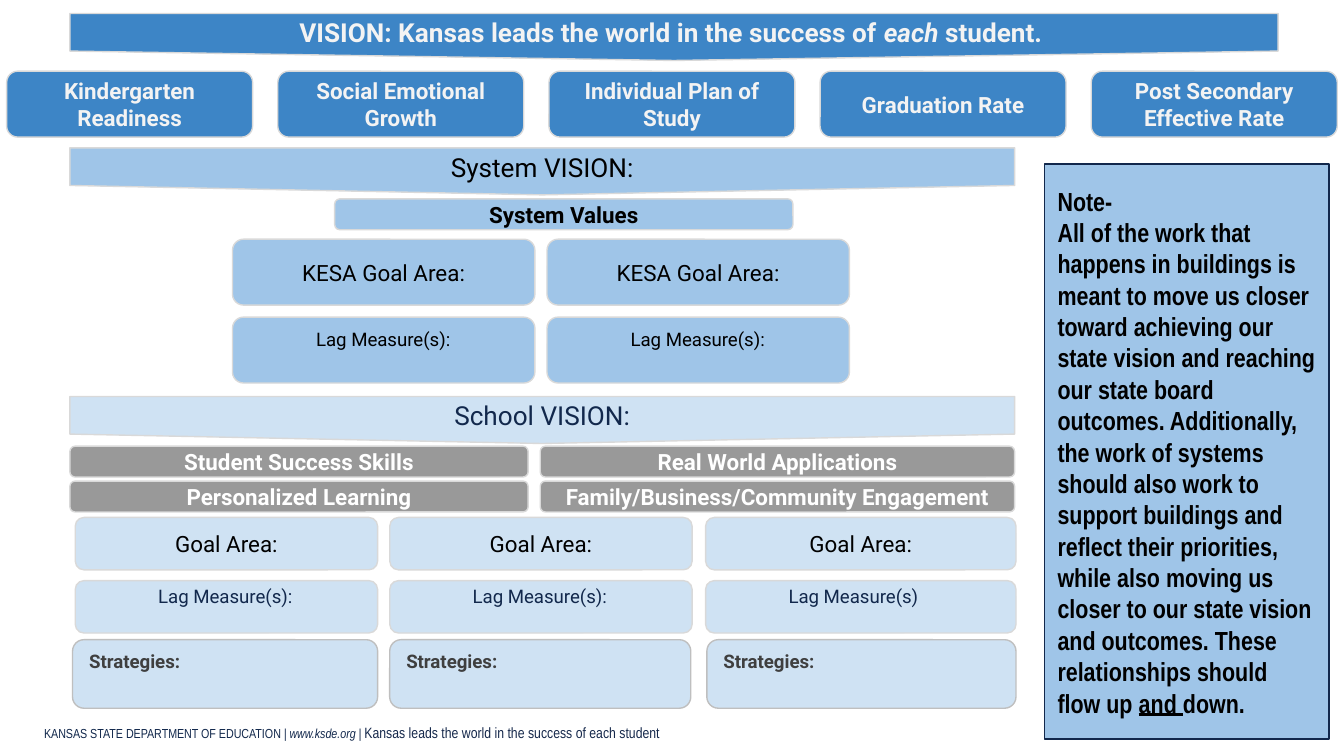
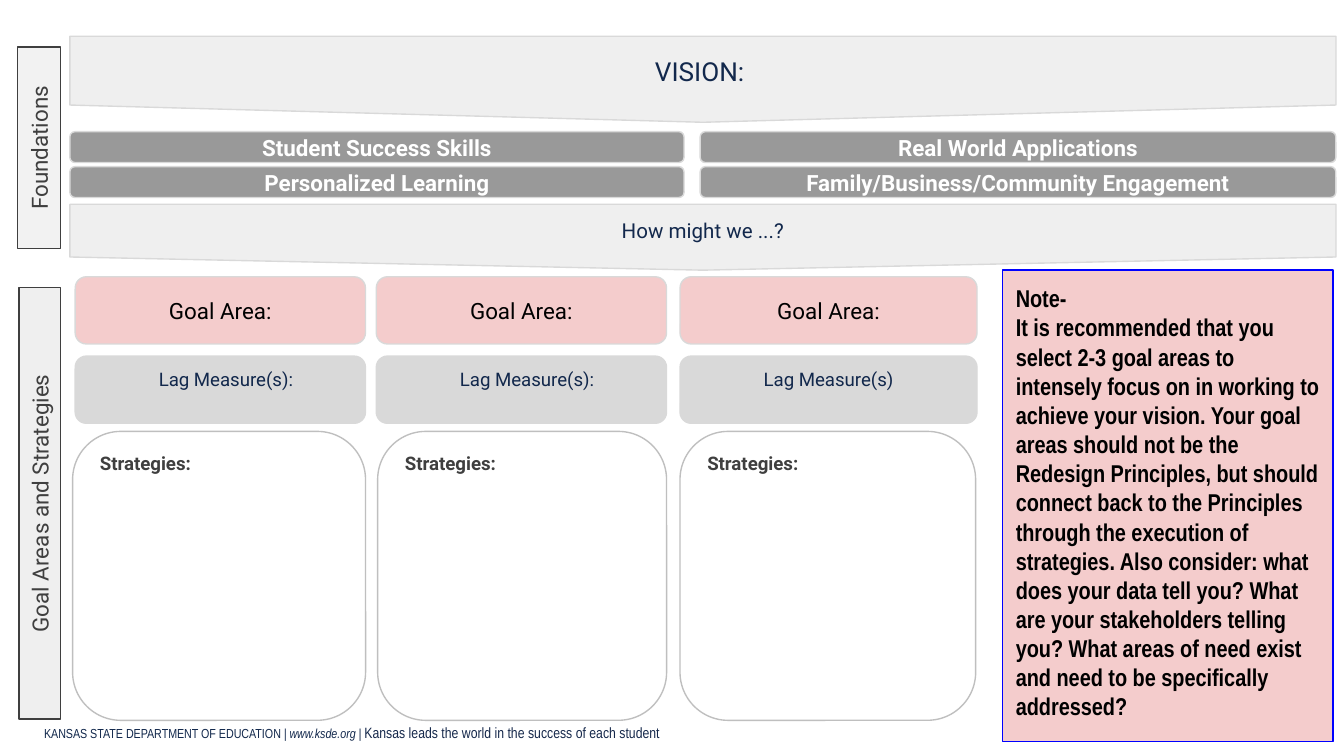
import dataclasses
import pptx
import pptx.dml.color
import pptx.enum.shapes
import pptx.enum.text
import pptx.util

Inches = pptx.util.Inches
Pt = pptx.util.Pt
RGBColor = pptx.dml.color.RGBColor
Preset = pptx.enum.shapes.MSO_SHAPE
Align = pptx.enum.text.PP_ALIGN
Anchor = pptx.enum.text.MSO_ANCHOR

NAVY = RGBColor(0x12, 0x28, 0x4C)
FOOTER_NAVY = RGBColor(0x15, 0x28, 0x4B)
BLACK = RGBColor(0, 0, 0)
WHITE = RGBColor(0xFF, 0xFF, 0xFF)
OFF_WHITE = RGBColor(0xF3, 0xF3, 0xF3)
CHARCOAL = RGBColor(0x3F, 0x3F, 0x3F)
STATE_BLUE = RGBColor(0x3D, 0x85, 0xC6)
SYSTEM_BLUE = RGBColor(0x9F, 0xC5, 0xE8)
SCHOOL_BLUE = RGBColor(0xCF, 0xE2, 0xF3)
GREY = RGBColor(0x99, 0x99, 0x99)
SILVER = RGBColor(0xBF, 0xBF, 0xBF)
LIGHT_GREY = RGBColor(0xD9, 0xD9, 0xD9)
PALE_GREY = RGBColor(0xEF, 0xEF, 0xEF)
TAB_GREY = RGBColor(0xF2, 0xF2, 0xF2)
PINK = RGBColor(0xF4, 0xCC, 0xCC)
NOTE_BLUE = RGBColor(0, 0, 0xFF)

ROBOTO = "Roboto"
NARROW = "Arial Narrow"


@dataclasses.dataclass(frozen=True)
class Style:
    size: float = 12
    color: RGBColor = BLACK
    bold: bool = False
    font: str = ROBOTO
    preset: int = Preset.ROUNDED_RECTANGLE
    line: RGBColor = LIGHT_GREY
    align: int = Align.CENTER
    anchor: int = Anchor.MIDDLE
    indent: float = 0
    top_inset: float = 0.05
    bottom_inset: float = 0.05


GOAL = Style()
VALUES = Style(bold=True)
OUTCOME = Style(color=OFF_WHITE, bold=True)
PRINCIPLE = Style(color=WHITE, bold=True)
LAG = Style(10, NAVY, align=Align.LEFT, indent=0.5, top_inset=0, bottom_inset=0.16)
SYSTEM_LAG = dataclasses.replace(LAG, color=BLACK)
STRATEGY = Style(10, CHARCOAL, True, line=SILVER, align=Align.LEFT, anchor=Anchor.TOP)
BANNER = Style(14, NAVY, preset=Preset.FLOWCHART_OFFPAGE_CONNECTOR,
               top_inset=0.1, bottom_inset=0.1)
SYSTEM_BANNER = dataclasses.replace(BANNER, color=BLACK)
STATE_BANNER = dataclasses.replace(BANNER, color=OFF_WHITE, bold=True)
QUESTION_BANNER = dataclasses.replace(BANNER, size=11)
SIDE_TAB = Style(color=CHARCOAL, preset=Preset.RECTANGLE, line=CHARCOAL)
BLUE_NOTE = Style(14, BLACK, True, NARROW, Preset.RECTANGLE, NAVY, Align.LEFT,
                  top_inset=0.1, bottom_inset=0.1)
PINK_NOTE = dataclasses.replace(BLUE_NOTE, size=13, line=NOTE_BLUE, anchor=Anchor.TOP)

FOOTER = [
    ("KANSAS STATE DEPARTMENT OF EDUCATION ", 7, NAVY, False),
    ("| www.ksde.org | ", 7, NAVY, True),
    ("Kansas leads the world in the success of each student", 8, FOOTER_NAVY, False),
]
STATE_VISION = [[("VISION: Kansas leads the world in the success of ", {}),
                 ("each ", {"italic": True}), ("student. ", {})]]
OUTCOMES = ["Kindergarten Readiness", "Social Emotional Growth", "Individual Plan of Study",
            "Graduation Rate", "Post Secondary Effective Rate"]
PRINCIPLES = [
    ["Student Success Skills", "Real World Applications"],
    ["Personalized Learning", "Family/Business/Community Engagement"],
]
GOAL_LABELS = ["Goal Area:"] * 3
LAG_LABELS = ["Lag Measure(s):", "Lag Measure(s):", "Lag Measure(s)"]
STRATEGY_LABELS = ["Strategies:"] * 3
ALIGNMENT_NOTE = [
    [("Note-", {})],
    [("All of the work that happens in buildings is meant to move us closer toward achieving "
      "our state vision and reaching our state board outcomes. Additionally, the work of "
      "systems should also work to support buildings and reflect their priorities, while also "
      "moving us closer to our state vision and outcomes. These relationships should flow up ",
      {}), ("and ", {"underline": True}), ("down.", {})],
]
GOALS_NOTE = [
    [("Note-", {})],
    [("It is recommended that you select 2-3 goal areas to intensely focus on in working to "
      "achieve your vision. Your goal areas should not be the Redesign Principles, but should "
      "connect back to the Principles through the execution of strategies. Also consider: what "
      "does your data tell you? What are your stakeholders telling you? What areas of need "
      "exist and need to be specifically addressed?", {})],
]


def set_insets(frame, top, bottom):
    frame.word_wrap = True
    frame.margin_left = frame.margin_right = Inches(0.1)
    frame.margin_top, frame.margin_bottom = Inches(top), Inches(bottom)


def format_run(run, font, size, color, bold=False, italic=False, underline=False):
    run.font.name = font
    run.font.size = Pt(size)
    run.font.color.rgb = color
    run.font.bold = bold
    run.font.italic = italic
    run.font.underline = underline


def add_box(slide, at, content, fill, style, rotation=0):
    shape = slide.shapes.add_shape(style.preset, *map(Inches, at))
    shape.shadow.inherit = False
    shape.rotation = rotation
    shape.fill.solid()
    shape.fill.fore_color.rgb = fill
    shape.line.color.rgb = style.line
    shape.line.width = Pt(0.75)
    frame = shape.text_frame
    set_insets(frame, style.top_inset, style.bottom_inset)
    frame.vertical_anchor = style.anchor
    paragraphs = [[(content, {})]] if isinstance(content, str) else content
    frame.text = "\n".join(parts[0][0] for parts in paragraphs)
    for paragraph, parts in zip(frame.paragraphs, paragraphs):
        paragraph.alignment = style.align
        if style.indent:
            paragraph._p.get_or_add_pPr().set("indent", str(Inches(style.indent)))
        for text, emphasis in parts[1:]:
            paragraph.add_run().text = text
        for run, (text, emphasis) in zip(paragraph.runs, parts):
            format_run(run, style.font, style.size, style.color, style.bold, **emphasis)


def add_row(slide, labels, columns, top, height, fill, style):
    for label, (left, width) in zip(labels, columns):
        add_box(slide, (left, top, width, height), label, fill, style)


def add_principles(slide, columns, top):
    for index, labels in enumerate(PRINCIPLES):
        add_row(slide, labels, columns, top + 0.26 * index, 0.23, GREY, PRINCIPLE)


def add_footer(slide):
    frame = slide.shapes.add_textbox(*map(Inches, (0.23, 5.33, 6.6, 0.24))).text_frame
    set_insets(frame, 0.05, 0.05)
    frame.vertical_anchor = Anchor.BOTTOM
    for text, size, color, italic in FOOTER:
        run = frame.paragraphs[0].add_run()
        run.text = text
        format_run(run, NARROW, size, color, italic=italic)


def build_alignment(slide):
    add_box(slide, (0.52, 0.1, 8.99, 0.35), STATE_VISION, STATE_BLUE, STATE_BANNER)
    first_left, last_left = 0.05, 8.12
    outcome_step = (last_left - first_left) / (len(OUTCOMES) - 1)
    outcome_columns = [(first_left + outcome_step * index, 1.83)
                       for index in range(len(OUTCOMES))]
    add_row(slide, OUTCOMES, outcome_columns, 0.53, 0.49, STATE_BLUE, OUTCOME)

    add_box(slide, (0.52, 1.1, 7.03, 0.35), "System VISION:", SYSTEM_BLUE, SYSTEM_BANNER)
    add_box(slide, (2.49, 1.48, 3.41, 0.23), "System Values", SYSTEM_BLUE, VALUES)
    system_columns = [(1.73, 2.25), (4.07, 2.25)]
    add_row(slide, ["KESA Goal Area:"] * 2, system_columns, 1.78, 0.49, SYSTEM_BLUE, GOAL)
    add_row(slide, LAG_LABELS, system_columns, 2.36, 0.49, SYSTEM_BLUE, SYSTEM_LAG)

    add_box(slide, (0.52, 2.95, 7.03, 0.35), "School VISION:", SCHOOL_BLUE, BANNER)
    add_principles(slide, [(0.52, 3.41), (4.02, 3.53)], 3.32)
    school_columns = [(0.56, 2.25), (2.9, 2.25), (5.25, 2.31)]
    strategy_columns = [(0.54, 2.27), (2.9, 2.24), (5.26, 2.3)]
    add_row(slide, GOAL_LABELS, school_columns, 3.85, 0.39, SCHOOL_BLUE, GOAL)
    add_row(slide, LAG_LABELS, school_columns, 4.32, 0.39, SCHOOL_BLUE, LAG)
    add_row(slide, STRATEGY_LABELS, strategy_columns, 4.76, 0.51, SCHOOL_BLUE, STRATEGY)
    add_box(slide, (7.77, 1.22, 2.12, 4.28), ALIGNMENT_NOTE, SYSTEM_BLUE, BLUE_NOTE)


def build_school_plan(slide):
    add_box(slide, (-0.46, 0.94, 1.5, 0.32), "Foundations", TAB_GREY, SIDE_TAB, 270)
    add_box(slide, (-1.31, 3.59, 3.21, 0.31), "Goal Areas and Strategies", PALE_GREY,
            SIDE_TAB, 270)
    add_box(slide, (0.52, 0.27, 9.42, 0.64), "VISION: ", PALE_GREY, BANNER)
    add_principles(slide, [(0.52, 4.57), (5.21, 4.73)], 0.98)
    add_box(slide, (0.52, 1.52, 9.42, 0.49), "How might we ...?", PALE_GREY, QUESTION_BANNER)
    goal_columns = [(0.56, 2.16), (2.8, 2.16), (5.06, 2.21)]
    strategy_columns = [(0.54, 2.18), (2.81, 2.15), (5.06, 2.2)]
    add_row(slide, GOAL_LABELS, goal_columns, 2.06, 0.5, PINK, GOAL)
    add_row(slide, LAG_LABELS, goal_columns, 2.65, 0.5, LIGHT_GREY, LAG)
    add_row(slide, STRATEGY_LABELS, strategy_columns, 3.21, 2.15, WHITE, STRATEGY)
    add_box(slide, (7.46, 2.01, 2.46, 3.51), GOALS_NOTE, PINK, PINK_NOTE)


def main():
    presentation = pptx.Presentation()
    presentation.slide_width = Inches(10)
    presentation.slide_height = presentation.slide_width * 9 // 16
    blank_layout = presentation.slide_layouts.get_by_name("Blank")
    for build in (build_alignment, build_school_plan):
        slide = presentation.slides.add_slide(blank_layout)
        add_footer(slide)
        build(slide)
    presentation.save("out.pptx")


if __name__ == "__main__":
    main()
